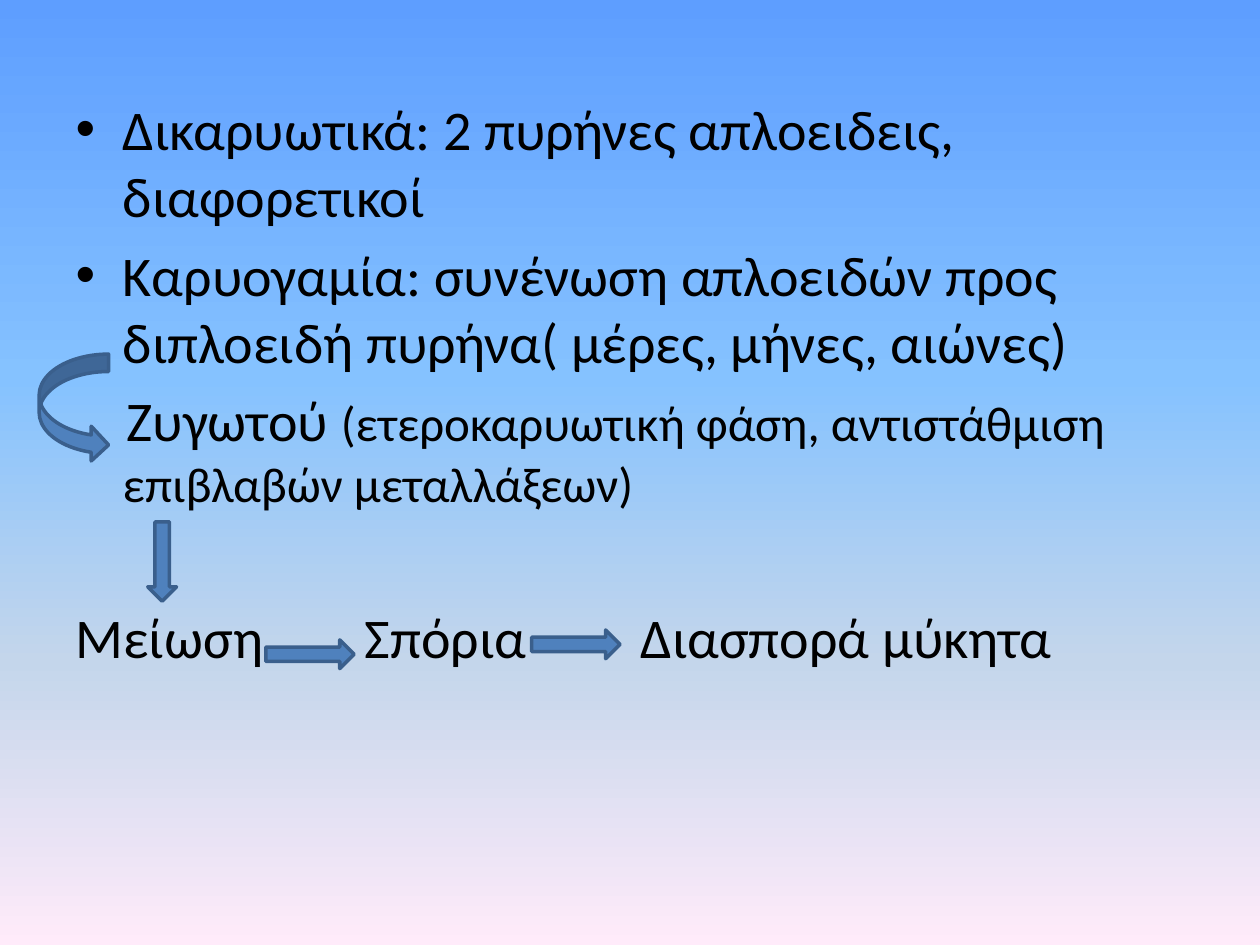
from dataclasses import dataclass

from lxml.etree import SubElement
from pptx import Presentation
from pptx.dml.color import RGBColor
from pptx.enum.shapes import MSO_SHAPE
from pptx.oxml.ns import qn
from pptx.util import Cm, Pt


@dataclass(frozen=True)
class Theme:
    font: str = "Calibri"
    text: str = "000000"
    arrow_fill: str = "4F81BD"
    arrow_line: str = "3A5F8C"
    background: tuple = ((0, "5E9EFF"), (40, "85C2FF"), (70, "C4D6EB"), (100, "FFEBFA"))
    body_size: int = 32
    note_size: int = 28


theme = Theme()

presentation = Presentation()
presentation.slide_width = Cm(25.4)
presentation.slide_height = Cm(19.05)
slide = presentation.slides.add_slide(presentation.slide_layouts[1])

background_fill = slide.background.fill
background_fill.gradient()
background_fill.gradient_angle = 270
stop_list = next(slide.element.iter(qn("a:gsLst")))
for stop in list(stop_list):
    stop_list.remove(stop)
for percent, color in theme.background:
    stop = SubElement(stop_list, qn("a:gs"), pos=str(percent * 1000))
    SubElement(stop, qn("a:srgbClr"), val=color)

title = slide.shapes.title
title.element.getparent().remove(title.element)

body = slide.placeholders[1]
body.left, body.top, body.width, body.height = Cm(1.27), Cm(1.78), Cm(22.86), Cm(15.24)
text_frame = body.text_frame

size, note_size = theme.body_size, theme.note_size
paragraphs = [
    [("Δικαρυωτικά: 2 πυρήνες απλοειδεις, διαφορετικοί", size, 0)],
    [("Καρυογαμία: συνένωση απλοειδών προς διπλοειδή πυρήνα( μέρες, μήνες, αιώνες)", size, 0)],
    [
        ("Ζυγωτού ", size, 0),
        ("(ετεροκαρυωτική φάση, αντιστάθμιση επιβλαβών μεταλλάξεων)", note_size, 0),
    ],
    [
        ("Μείωση", size, 0),
        (" ", size, 50.6),
        ("Σπόρια", size, 0),
        (" ", size, 57.9),
        ("Διασπορά μύκητα", size, 0),
    ],
]
for index, runs in enumerate(paragraphs):
    paragraph = text_frame.paragraphs[0] if index == 0 else text_frame.add_paragraph()
    for text, run_size, letter_spacing in runs:
        run = paragraph.add_run()
        run.text = text
        run.font.size = Pt(run_size)
        if letter_spacing:
            run._r.get_or_add_rPr().set("spc", str(round(letter_spacing * 100)))
    paragraph.font.name = theme.font
    paragraph.font.color.rgb = RGBColor.from_string(theme.text)

zygote, stages = text_frame.paragraphs[2:]
stages.space_before = Pt(51.5)
for paragraph, margin, indent in (
    (zygote, Cm(0.95), Cm(0.08)),
    (stages, Cm(0), Cm(0)),
):
    properties = paragraph._p.get_or_add_pPr()
    properties.set("marL", str(margin))
    properties.set("indent", str(indent))
    default_font = properties.find(qn("a:defRPr"))
    default_font.addprevious(SubElement(properties, qn("a:buNone")))

arrows = [
    (MSO_SHAPE.CURVED_RIGHT_ARROW, 0.79, 7.14, 1.4, 2.18),
    (MSO_SHAPE.DOWN_ARROW, 2.98, 10.52, 0.58, 1.6),
    (MSO_SHAPE.RIGHT_ARROW, 5.36, 12.9, 1.78, 0.58),
    (MSO_SHAPE.RIGHT_ARROW, 10.72, 12.7, 1.78, 0.58),
]
for kind, left, top, width, height in arrows:
    arrow = slide.shapes.add_shape(kind, Cm(left), Cm(top), Cm(width), Cm(height))
    arrow.shadow.inherit = False
    arrow.fill.solid()
    arrow.fill.fore_color.rgb = RGBColor.from_string(theme.arrow_fill)
    arrow.line.color.rgb = RGBColor.from_string(theme.arrow_line)
    arrow.line.width = Pt(2)

presentation.save("out.pptx")
